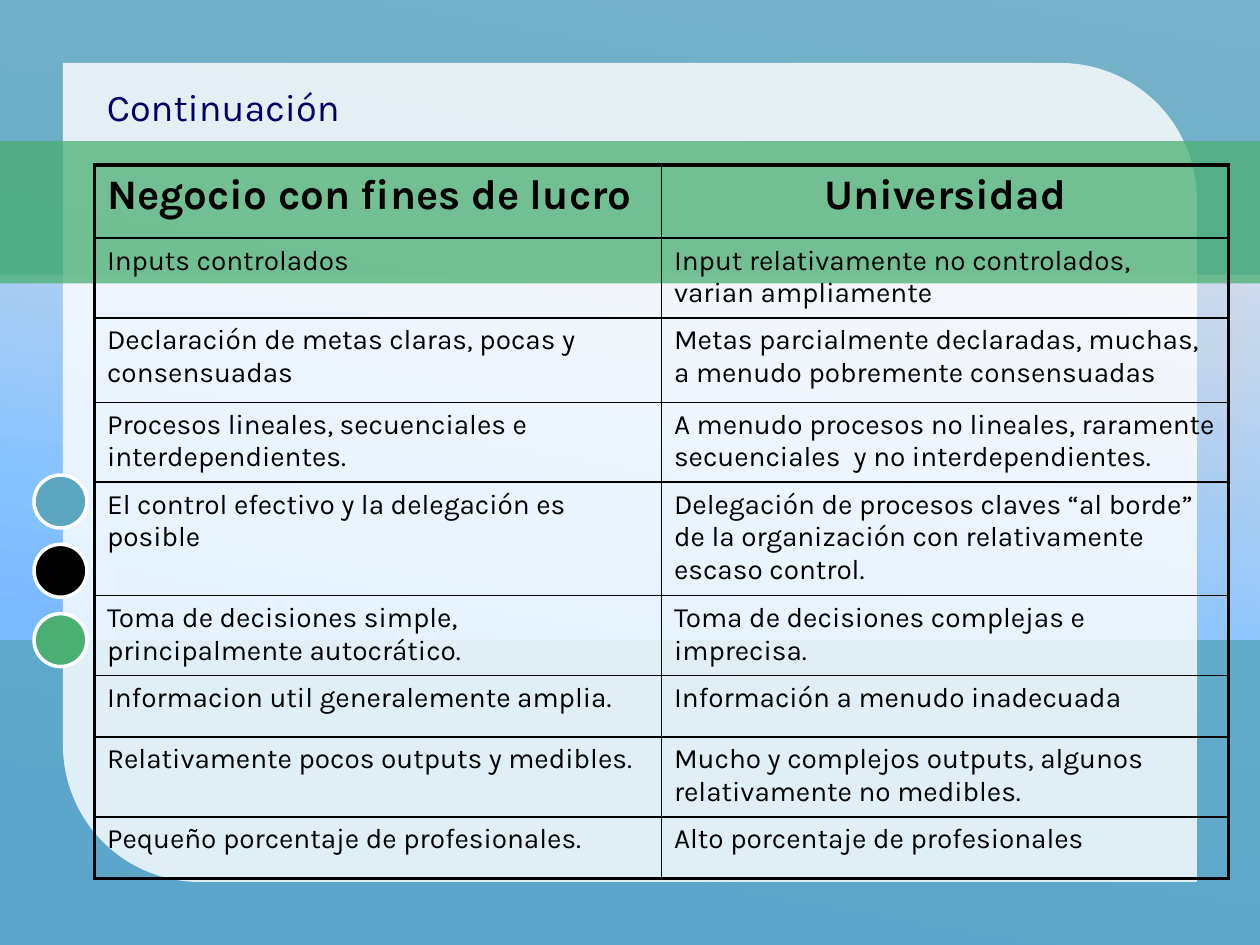
from typing import NamedTuple

from lxml import etree
from pptx import Presentation
from pptx import util as u
from pptx.dml.color import RGBColor
from pptx.enum import shapes, text
from pptx.oxml.ns import qn

FONT = "Karla"
BLACK, WHITE, BLUE, GREEN = "000000", "FFFFFF", "5AA6C0", "4BAF73"
ST = shapes.MSO_SHAPE


class Panel(NamedTuple):
    kind: ST
    left: float
    top: float
    width: float
    height: float
    color: str
    opacity: int
    adj: tuple[float, ...] = ()


PANELS = [
    Panel(ST.RECTANGLE, 0, 0, 10, 2.18, BLUE, 82),
    Panel(ST.RECTANGLE, 0, 5.08, 10, 2.42, BLUE, 82),
    Panel(ST.ROUND_2_DIAG_RECTANGLE, 0.5, 0.5, 9, 6.5, WHITE, 81, (0, 0.167)),
    Panel(ST.RECTANGLE, 0, 1.12, 10, 1.13, GREEN, 75),
]
DOT_COLORS = [BLUE, BLACK, GREEN]
STOPS = [(0, "5E9EFF"), (40, "85C2FF"), (70, "C4D6EB"), (100, "FFEBFA")]
ROWS = [
    ("Negocio con fines de lucro", "Universidad"),
    ("Inputs controlados", "Input relativamente no controlados, varian ampliamente"),
    ("Declaración de metas claras, pocas y consensuadas",
     "Metas parcialmente declaradas, muchas, a menudo pobremente consensuadas"),
    ("Procesos lineales, secuenciales e interdependientes.",
     "A menudo procesos no lineales, raramente secuenciales  y no interdependientes."),
    ("El control efectivo y la delegación es posible",
     "Delegación de procesos claves “al borde” de la organización con "
     "relativamente escaso control."),
    ("Toma de decisiones simple, principalmente autocrático.",
     "Toma de decisiones complejas e imprecisa."),
    ("Informacion util generalemente amplia.", "Información a menudo inadecuada"),
    ("Relativamente pocos outputs y medibles.",
     "Mucho y complejos outputs, algunos relativamente no medibles."),
    ("Pequeño porcentaje de profesionales.", "Alto porcentaje de profesionales"),
]
HEADER_H, ROW_H, TALL_ROW, TALL_H = 0.58, 0.49, 2, 0.67


def rgb(color: str) -> RGBColor:
    return RGBColor.from_string(color)


def set_font(p, size: float, color: str, bold: bool = False) -> None:
    p.font.name, p.font.size, p.font.bold = FONT, u.Pt(size), bold
    p.font.color.rgb = rgb(color)


def set_background(s) -> None:
    fill = s.background.fill
    fill.gradient()
    grad = s._element.cSld.find(".//" + qn("a:gradFill"))
    stops = grad.find(qn("a:gsLst"))
    for old in list(stops):
        stops.remove(old)
    for pos, color in STOPS:
        gs = etree.SubElement(stops, qn("a:gs"), pos=str(pos * 1000))
        etree.SubElement(gs, qn("a:srgbClr"), val=color)
    grad.find(qn("a:lin")).set("ang", str(280 * 60000))


def add_panel(s, panel: Panel) -> None:
    box = [u.Inches(v) for v in panel[1:5]]
    sp = s.shapes.add_shape(panel.kind, *box)
    sp.shadow.inherit = False
    for i, value in enumerate(panel.adj):
        sp.adjustments[i] = value
    sp.fill.solid()
    sp.fill.fore_color.rgb = rgb(panel.color)
    clr = sp._element.spPr.find(qn("a:solidFill")).find(qn("a:srgbClr"))
    etree.SubElement(clr, qn("a:alpha"), val=str(panel.opacity * 1000))
    sp.line.fill.background()


def add_dot(s, index: int, color: str) -> None:
    sp = s.shapes.add_shape(ST.OVAL, u.Inches(0.27), u.Inches(3.77 + 0.55 * index),
                            u.Inches(0.42), u.Inches(0.42))
    sp.shadow.inherit = False
    sp.fill.solid()
    sp.fill.fore_color.rgb = rgb(color)
    sp.line.color.rgb = rgb(WHITE)
    sp.line.width = u.Pt(2)


def add_title(s, title: str) -> None:
    sp = s.shapes.add_textbox(u.Inches(0.75), u.Inches(0.44), u.Inches(7.51), u.Inches(0.63))
    tf = sp.text_frame
    tf.word_wrap = True
    tf.vertical_anchor = text.MSO_ANCHOR.BOTTOM
    p = tf.paragraphs[0]
    p.text = title
    set_font(p, 21.6, "000066")


def set_borders(cell, outer: dict[str, bool]) -> None:
    tc_pr = cell._tc.get_or_add_tcPr()
    for i, (side, is_outer) in enumerate(outer.items()):
        width = u.Pt(2.25 if is_outer else 1)
        ln = etree.Element(qn(f"a:ln{side}"), w=str(int(width)))
        fill = etree.SubElement(ln, qn("a:solidFill"))
        etree.SubElement(fill, qn("a:srgbClr"), val=BLACK)
        tc_pr.insert(i, ln)


def add_comparison(s) -> None:
    last = len(ROWS) - 1
    heights = [HEADER_H] + [TALL_H if i == TALL_ROW else ROW_H for i in range(1, last + 1)]
    table = s.shapes.add_table(len(ROWS), 2, u.Inches(0.75), u.Inches(1.31),
                               u.Inches(9), u.Inches(sum(heights))).table
    table.first_row = table.horz_banding = False
    for i, row in enumerate(ROWS):
        table.rows[i].height = u.Inches(heights[i])
        for j, value in enumerate(row):
            cell = table.cell(i, j)
            cell.fill.background()
            set_borders(cell, {"L": j == 0, "R": j == 1, "T": i == 0, "B": i == last})
            p = cell.text_frame.paragraphs[0]
            p.text = value
            set_font(p, 24 if i == 0 else 16, BLACK, bold=i == 0)
    table.cell(0, 1).text_frame.paragraphs[0].alignment = text.PP_ALIGN.CENTER


def main() -> None:
    prs = Presentation()
    prs.slide_width, prs.slide_height = u.Inches(10), u.Inches(7.5)
    s = prs.slides.add_slide(prs.slide_layouts[6])
    set_background(s)
    for panel in PANELS:
        add_panel(s, panel)
    for i, color in enumerate(DOT_COLORS):
        add_dot(s, i, color)
    add_title(s, "Continuación")
    add_comparison(s)
    prs.save("out.pptx")


if __name__ == "__main__":
    main()
